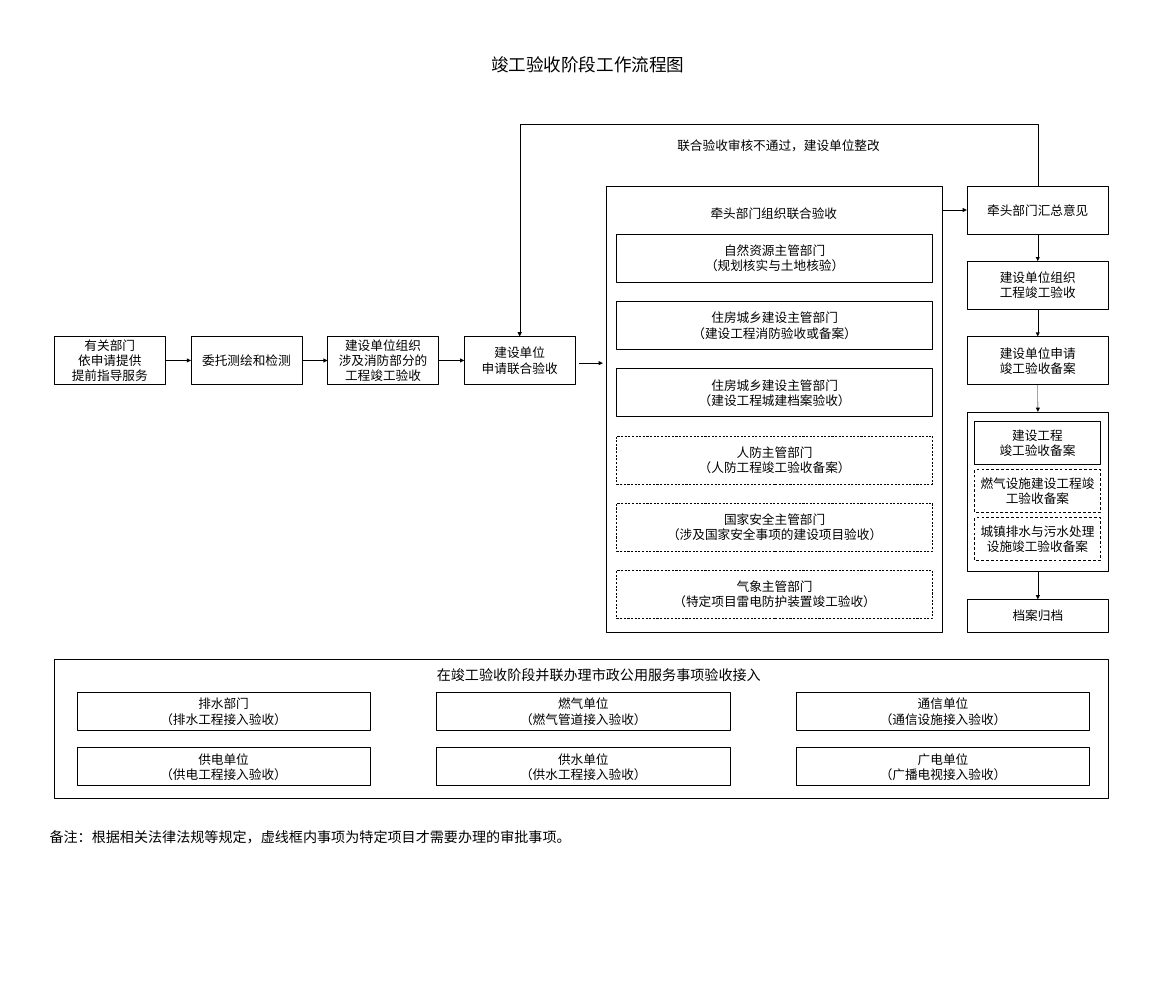
"""Build the flow chart of the completion acceptance stage on a grid of 100 columns by 100 rows."""
from dataclasses import dataclass

from lxml.etree import SubElement
from pptx import Presentation
from pptx.dml.color import RGBColor as Color
from pptx.enum.dml import MSO_LINE_DASH_STYLE as Dash
from pptx.enum.shapes import MSO_CONNECTOR_TYPE as Wire, MSO_SHAPE as Form
from pptx.enum.text import MSO_ANCHOR as Anchor, PP_ALIGN as Align
from pptx.oxml.ns import qn
from pptx.shapes.autoshape import Shape
from pptx.shapes.connector import Connector
from pptx.slide import Slide
from pptx.util import Cm, Pt

WIDE, HIGH = Cm(59), Cm(50)
TOP, LEFT, BOTTOM, RIGHT = range(4)


@dataclass(frozen=True)
class Theme:
    font: str = "Noto Sans CJK SC"
    ink: Color = Color(0, 0, 0)
    title: int = 25
    head: int = 20
    body: int = 18
    edge: float = 1
    wire: float = 0.5


@dataclass(frozen=True)
class Area:
    x: float
    y: float
    w: float
    h: float

    def step(self, cols: float = 0, rows: float = 0) -> "Area":
        return Area(self.x + cols, self.y + rows, self.w, self.h)

    def place(self) -> tuple[int, int, int, int]:
        return col(self.x), row(self.y), col(self.w), row(self.h)


@dataclass(frozen=True)
class Step:
    text: str
    area: Area
    dash: bool = False
    edge: float = 1


THEME = Theme()
FLOW = Area(4.62, 33.74, 9.43, 4.83)
HALL = Area(51.54, 18.65, 28.55, 44.78)
DEPT = Area(52.44, 23.49, 26.86, 4.83)
TAIL = Area(82.22, 18.65, 12.05, 4.83)
FILES = Area(82.23, 41.31, 12.05, 16.01)
FILE = Area(82.88, 42.28, 10.68, 4.28)
STORE = Area(82.23, 60.12, 12.05, 3.3)
BAND = Area(4.62, 66.16, 89.63, 13.93)
UNIT = Area(6.54, 69.47, 24.94, 3.76)

FLOW_TEXTS = ("有关部门\n依申请提供\n提前指导服务", "委托测绘和检测",
              "建设单位组织\n涉及消防部分的工程竣工验收", "建设单位\n申请联合验收")
DEPT_TEXTS = ("自然资源主管部门\n（规划核实与土地核验）",
              "住房城乡建设主管部门\n（建设工程消防验收或备案）",
              "住房城乡建设主管部门\n（建设工程城建档案验收）",
              "人防主管部门\n（人防工程竣工验收备案）",
              "国家安全主管部门\n（涉及国家安全事项的建设项目验收）",
              "气象主管部门\n（特定项目雷电防护装置竣工验收）")
TAIL_TEXTS = ("牵头部门汇总意见", "建设单位组织\n工程竣工验收", "建设单位申请\n竣工验收备案")
FILE_TEXTS = ("建设工程\n竣工验收备案", "燃气设施建设工程竣工验收备案",
              "城镇排水与污水处理设施竣工验收备案")
UNIT_TEXTS = ("排水部门\n（排水工程接入验收）", "燃气单位\n（燃气管道接入验收）",
              "通信单位\n（通信设施接入验收）", "供电单位\n（供电工程接入验收）",
              "供水单位\n（供水工程接入验收）", "广电单位\n（广播电视接入验收）")


def col(share: float) -> int:
    return round(WIDE * share / 100)


def row(share: float) -> int:
    return round(HIGH * share / 100)


def write(shape: Shape, text: str, *, size: int = THEME.body, align: Align = Align.CENTER,
          anchor: Anchor = Anchor.MIDDLE, gap: float = 1) -> None:
    frame = shape.text_frame
    frame.word_wrap = True
    frame.vertical_anchor = anchor
    frame.text = text
    for para in frame.paragraphs:
        para.alignment = align
        para.line_spacing = gap
        for run in para.runs:
            run.font.name = THEME.font
            run.font.size = Pt(size)
            run.font.color.rgb = THEME.ink


def label(slide: Slide, text: str, area: Area, *, size: int = THEME.body,
          align: Align = Align.CENTER, gap: float = 1) -> None:
    box = slide.shapes.add_textbox(*area.place())
    write(box, text, size=size, align=align, anchor=Anchor.TOP, gap=gap)


def draw(slide: Slide, step: Step) -> Shape:
    box = slide.shapes.add_shape(Form.RECTANGLE, *step.area.place())
    box.shadow.inherit = False
    box.fill.background()
    box.line.color.rgb = THEME.ink
    box.line.width = Pt(step.edge)
    if step.dash:
        box.line.dash_style = Dash.DASH
    if step.text:
        write(box, step.text)
    return box


def arrow(slide: Slide, kind: Wire, ends: tuple[int, int, int, int]) -> Connector:
    wire = slide.shapes.add_connector(kind, *ends)
    wire.line.color.rgb = THEME.ink
    wire.line.width = Pt(THEME.wire)
    SubElement(wire.line._get_or_add_ln(), qn("a:tailEnd"), type="triangle")
    SubElement(wire._element.spPr, qn("a:effectLst"))
    return wire


def link(slide: Slide, start: Shape, out: int, end: Shape, into: int) -> None:
    wire = arrow(slide, Wire.STRAIGHT, (0, 0, 0, 0))
    wire.begin_connect(start, out)
    wire.end_connect(end, into)


def loop(slide: Slide, start: Shape, end: Shape) -> None:
    wire = arrow(slide, Wire.ELBOW, (0, 0, 0, 0))
    wire.begin_connect(start, TOP)
    wire.end_connect(end, TOP)
    right, left = (box.left + box.width // 2 for box in (start, end))
    span, drop = right - left, end.top - start.top
    wire.left, wire.top = (left + right - drop) // 2, (start.top + end.top - span) // 2
    wire.width, wire.height = drop, span
    frame = wire._element.spPr.find(qn("a:xfrm"))
    for key, value in (("rot", "16200000"), ("flipH", "1"), ("flipV", "1")):
        frame.set(key, value)
    guides = wire._element.spPr.find(qn("a:prstGeom")).find(qn("a:avLst"))
    SubElement(guides, qn("a:gd"), name="adj1", fmla="val -41200")


def main() -> None:
    deck = Presentation()
    deck.slide_width, deck.slide_height = WIDE, HIGH
    slide = deck.slides.add_slide(deck.slide_layouts[5])
    title = slide.shapes.title
    title.left, title.top, title.width, title.height = Area(28.28, 5.13, 43.39, 2.64).place()
    write(title, "竣工验收阶段工作流程图", size=THEME.title, anchor=Anchor.TOP)

    _, files, _ = [draw(slide, Step("", area)) for area in (HALL, FILES, BAND)]
    flow = [draw(slide, Step(text, FLOW.step(cols=11.62 * i)))
            for i, text in enumerate(FLOW_TEXTS)]
    tail = [draw(slide, Step(text, TAIL.step(rows=7.55 * i)))
            for i, text in enumerate(TAIL_TEXTS)]
    store = draw(slide, Step("档案归档", STORE))
    for i, text in enumerate(DEPT_TEXTS):
        extra = i > 2
        draw(slide, Step(text, DEPT.step(rows=6.74 * i), extra, 0 if extra else THEME.edge))
    for i, text in enumerate(FILE_TEXTS):
        draw(slide, Step(text, FILE.step(rows=4.83 * i), i > 0))
    for i, text in enumerate(UNIT_TEXTS):
        draw(slide, Step(text, UNIT.step(30.59 * (i % 3), 5.54 * (i // 3))))

    for start, end in zip(flow, flow[1:]):
        link(slide, start, RIGHT, end, LEFT)
    down = [*tail, files, store]
    for start, end in zip(down, down[1:]):
        link(slide, start, BOTTOM, end, TOP)
    arrow(slide, Wire.STRAIGHT, (col(49.2), row(36.42), col(51.27), row(36.42)))
    level = tail[0].top + tail[0].height // 2
    leave = arrow(slide, Wire.STRAIGHT, (col(HALL.x + HALL.w), level, 0, 0))
    leave.end_connect(tail[0], LEFT)
    loop(slide, tail[0], flow[-1])

    label(slide, "联合验收审核不通过，建设单位整改", Area(44.51, 13.57, 43.39, 2.03))
    label(slide, "牵头部门组织联合验收", Area(57.56, 20.35, 16.49, 2.03))
    label(slide, "在竣工验收阶段并联办理市政公用服务事项验收接入",
          Area(22.86, 66.6, 56.13, 2.24), size=THEME.head)
    label(slide, "备注：根据相关法律法规等规定，虚线框内事项为特定项目才需要办理的审批事项。",
          Area(3.79, 81.96, 54.76, 3.05), size=THEME.head, align=Align.LEFT, gap=1.5)
    deck.save("out.pptx")


if __name__ == "__main__":
    main()
